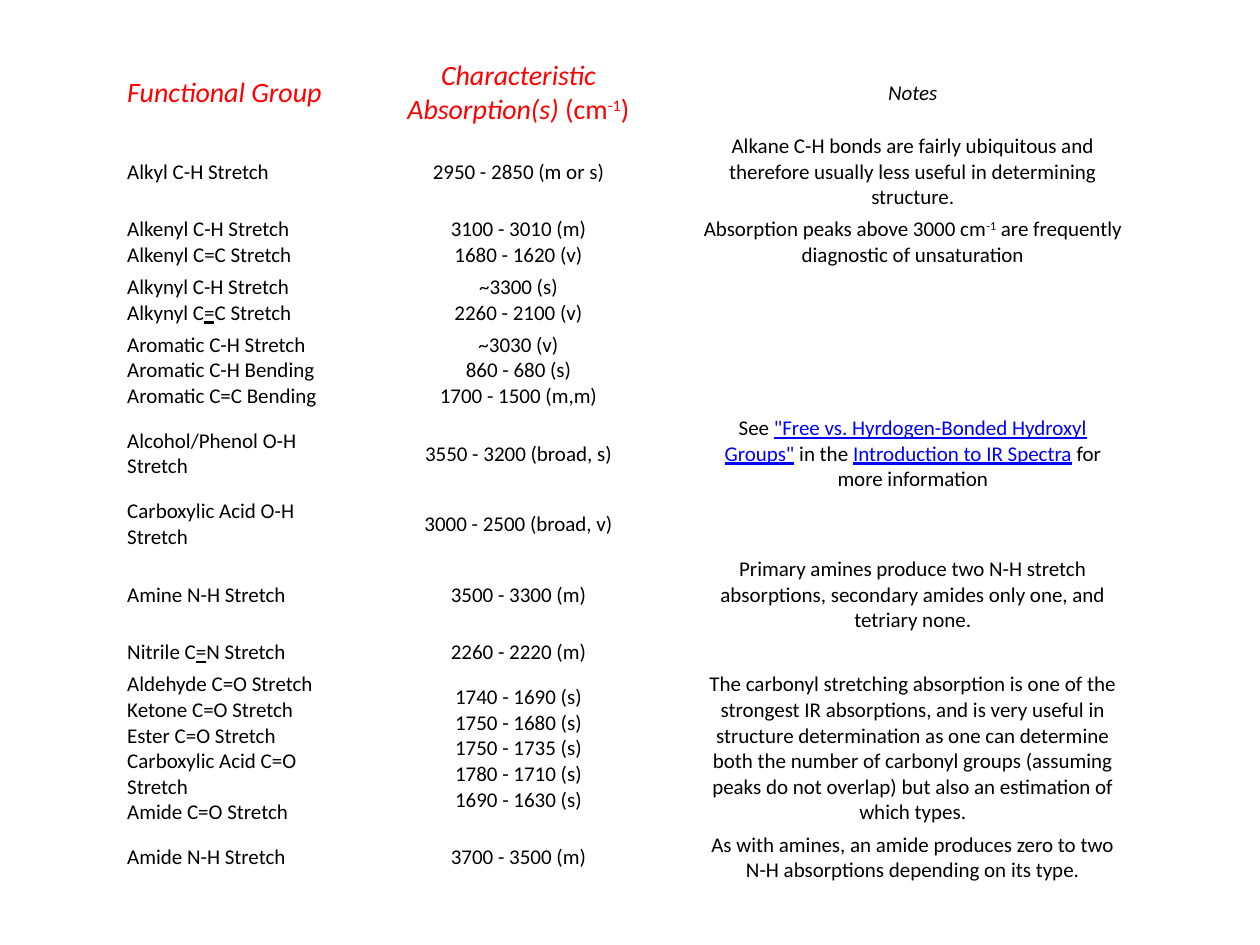
import pptx
import pptx.util
import pptx.dml.color
import pptx.enum.text
import pptx.oxml.ns
from lxml import etree

Inches, Pt = pptx.util.Inches, pptx.util.Pt
NBSP = chr(160)

# Content: a cell is a string or a list of (text, style) runs; "\n" breaks a line
HEADER = [
    [("Functional Group", "italic")],
    [("Characteristic Absorption(s)", "italic"), (NBSP + "(cm", ""), ("-1", "super"), (")", "")],
    [("Notes", "italic")],
]
ABSORPTIONS = [
    ["Alkyl C-H Stretch", "2950 - 2850 (m or s)",
     "Alkane C-H bonds are fairly ubiquitous and therefore usually less useful "
     "in determining structure."],
    ["Alkenyl C-H Stretch\nAlkenyl C=C Stretch", "3100 - 3010 (m)\n1680 - 1620 (v)",
     [("Absorption peaks above 3000 cm", ""), ("-1", "super"),
      (NBSP + "are frequently diagnostic of unsaturation", "")]],
    [[("Alkynyl C-H Stretch\nAlkynyl C", ""), ("=", "underline"), ("C Stretch", "")],
     "~3300 (s)\n2260 - 2100 (v)", ""],
    ["Aromatic C-H Stretch\nAromatic C-H Bending\nAromatic C=C Bending",
     "~3030 (v)\n860 - 680 (s)\n1700 - 1500 (m,m)", ""],
    ["Alcohol/Phenol O-H Stretch", "3550 - 3200 (broad, s)",
     [("See" + NBSP, ""), ('"Free vs. Hyrdogen-Bonded Hydroxyl Groups"', "reference"),
      (NBSP + "in the" + NBSP, ""), ("Introduction to IR Spectra", "reference"),
      (NBSP + "for more information", "")]],
    ["Carboxylic Acid O-H Stretch", "3000 - 2500 (broad, v)", ""],
    ["Amine N-H Stretch", "3500 - 3300 (m)",
     "Primary amines produce two N-H stretch absorptions, secondary amides only one, "
     "and tetriary none."],
    [[("Nitrile C", ""), ("=", "underline"), ("N Stretch", "")], "2260 - 2220 (m)", ""],
    ["Aldehyde C=O Stretch\nKetone C=O Stretch\nEster C=O Stretch\n"
     "Carboxylic Acid C=O Stretch\nAmide C=O Stretch",
     "1740 - 1690 (s)\n1750 - 1680 (s)\n1750 - 1735 (s)\n1780 - 1710 (s)\n1690 - 1630 (s)",
     "The carbonyl stretching absorption is one of the strongest IR absorptions, and is "
     "very useful in structure determination as one can determine both the number of "
     "carbonyl groups (assuming peaks do not overlap) but also an estimation of which types."],
    ["Amide N-H Stretch", "3700 - 3500 (m)",
     "As with amines, an amide produces zero to two N-H absorptions depending on its type."],
]
COLUMN_WIDTHS = [1.7, 2.87, 3.39]
ROW_HEIGHTS = [0.42, 0.43, 0.43, 0.43, 0.62, 0.5, 0.43, 0.43, 0.24, 1.19, 0.43]
LEFT, TOP = 0.98, 0.44
SIDE_MARGIN, LINE_MARGIN = Inches(0.03), Pt(1.85)
BODY_SIZE, HEADING_SIZE = 12, 16


def rgb(value):
    return pptx.dml.color.RGBColor.from_string(value)


def add_styled_run(paragraph, text, style, size, color):
    for number, line in enumerate(text.split("\n")):
        if number:
            paragraph.add_line_break()
        run = paragraph.add_run()
        run.text = line
        font = run.font
        font.name, font.size, font.bold = "Calibri", Pt(size), False
        font.italic = style == "italic"
        font.underline = style in ("underline", "reference")
        font.color.rgb = rgb("0000FF" if style == "reference" else color)
        if style == "super":
            font._element.set("baseline", "30000")


def fill_cell(cell, content, centred, size, color):
    cell.fill.solid()
    cell.fill.fore_color.rgb = rgb("FFFFFF")
    cell.vertical_anchor = pptx.enum.text.MSO_ANCHOR.MIDDLE
    cell.margin_left = cell.margin_right = SIDE_MARGIN
    cell.margin_top = cell.margin_bottom = LINE_MARGIN
    paragraph = cell.text_frame.paragraphs[0]
    align = pptx.enum.text.PP_ALIGN
    paragraph.alignment = align.CENTER if centred else align.LEFT
    if content:
        for text, style in [(content, "")] if isinstance(content, str) else content:
            add_styled_run(paragraph, text, style, size, color)
    # Line breaks and empty cells take the text size too, so rows stay low
    for line_break in paragraph._p.findall(pptx.oxml.ns.qn("a:br")):
        etree.SubElement(line_break, pptx.oxml.ns.qn("a:rPr"), sz=str(size * 100))
    etree.SubElement(paragraph._p, pptx.oxml.ns.qn("a:endParaRPr"), sz=str(size * 100))


presentation = pptx.Presentation()
presentation.slide_width, presentation.slide_height = Inches(10), Inches(7.5)
slide = presentation.slides.add_slide(presentation.slide_layouts[6])

# Table of infrared absorptions
rows = [HEADER] + ABSORPTIONS
absorption_table = slide.shapes.add_table(
    len(rows), len(COLUMN_WIDTHS), Inches(LEFT), Inches(TOP),
    Inches(sum(COLUMN_WIDTHS)), Inches(sum(ROW_HEIGHTS))).table
absorption_table.first_row = absorption_table.horz_banding = False
for column, width in zip(absorption_table.columns, COLUMN_WIDTHS):
    column.width = Inches(width)
for row, height in zip(absorption_table.rows, ROW_HEIGHTS):
    row.height = Inches(height)

for r, row in enumerate(rows):
    for c, content in enumerate(row):
        is_heading = r == 0 and c < 2
        fill_cell(absorption_table.cell(r, c), content, c > 0,
                  HEADING_SIZE if is_heading else BODY_SIZE,
                  "FF0000" if is_heading else "000000")

presentation.save("out.pptx")
